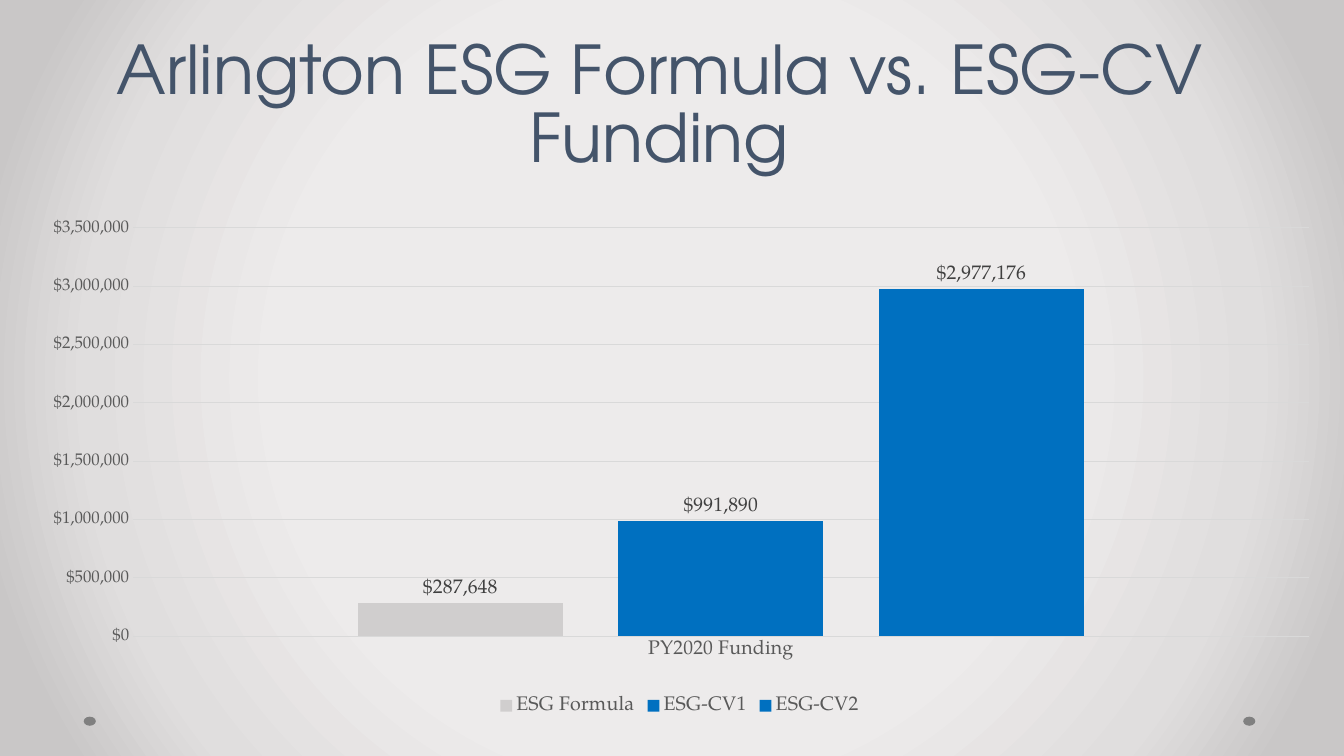
from dataclasses import dataclass

from lxml import etree
from pptx import Presentation
from pptx import util as u
from pptx.chart import data as chart_data
from pptx.dml.color import RGBColor
from pptx.enum import chart as charts, dml, shapes, text
from pptx.oxml import parse_xml
from pptx.oxml.ns import nsdecls, qn

WIDTH, HEIGHT = u.Inches(13.33), u.Inches(7.5)
HEADING_FONT, BODY_FONT = "TeX Gyre Adventor", "TeX Gyre Pagella"
DOLLARS = '"$"#,##0'

SLATE = RGBColor(0x44, 0x54, 0x6A)
DOT_GRAY = RGBColor(0x80, 0x80, 0x80)
LABEL_GRAY = RGBColor(0x40, 0x40, 0x40)
AXIS_GRAY = RGBColor(0x59, 0x59, 0x59)
GRID_GRAY = RGBColor(0xD9, 0xD9, 0xD9)
PALE_GRAY = RGBColor(0xD0, 0xCE, 0xCE)
BLUE = RGBColor(0x00, 0x70, 0xC0)
BACKDROP = (
    (50, RGBColor(0xED, 0xEB, 0xEB)),
    (76, RGBColor(0xE0, 0xDE, 0xDE)),
    (92, RGBColor(0xC9, 0xC7, 0xC7)),
)


@dataclass(frozen=True)
class Area:
    """A rectangle in percent of the slide, or of the chart."""
    left: float
    top: float
    width: float
    height: float

    def on_slide(self) -> tuple[int, int, int, int]:
        return (int(WIDTH * self.left / 100), int(HEIGHT * self.top / 100),
                int(WIDTH * self.width / 100), int(HEIGHT * self.height / 100))


@dataclass(frozen=True)
class Grant:
    name: str
    amount: int
    color: RGBColor


TITLE_AREA = Area(4.05, 4.8, 90.02, 19.07)
CHART_AREA = Area(2.4, 22.27, 96.32, 72.93)
PLOT_AREA = Area(7.8, 10.8, 90.8, 74.1)
DOTS = [Area(left, 94.8, 0.9, 1.2) for left in (92.5, 6.23)]
GRANTS = [
    Grant("ESG Formula", 287648, PALE_GRAY),
    Grant("ESG-CV1", 991890, BLUE),
    Grant("ESG-CV2", 2977176, BLUE),
]


def style_font(font, name: str, size: float, color: RGBColor) -> None:
    font.name, font.size, font.bold = name, u.Pt(size), False
    font.color.rgb = color


def style_line(line) -> None:
    line.color.rgb = GRID_GRAY
    line.width = u.Pt(0.75)


def paint_background(page) -> None:
    """Fill the page with a gradient that darkens outward from the centre."""
    page.background.fill.gradient()
    stops = "".join(
        f'<a:gs pos="{share * 1000}"><a:srgbClr val="{color}"/></a:gs>'
        for share, color in BACKDROP)
    radial = parse_xml(
        f'<a:gradFill {nsdecls("a")} rotWithShape="1"><a:gsLst>{stops}</a:gsLst>'
        '<a:path path="circle"><a:fillToRect l="50000" t="50000" r="50000" b="50000"/>'
        '</a:path></a:gradFill>')
    linear = next(page.element.iter(qn("a:gradFill")))
    linear.getparent().replace(linear, radial)


def add_dot(page, area: Area) -> None:
    dot = page.shapes.add_shape(shapes.MSO_SHAPE.OVAL, *area.on_slide())
    dot.shadow.inherit = False
    dot.fill.solid()
    dot.fill.fore_color.rgb = DOT_GRAY
    dot.line.fill.background()


def add_title(page, wording: str) -> None:
    frame = page.shapes.add_textbox(*TITLE_AREA.on_slide()).text_frame
    frame.word_wrap = True
    frame.vertical_anchor = text.MSO_ANCHOR.BOTTOM
    para = frame.paragraphs[0]
    para.text = wording
    para.alignment = text.PP_ALIGN.CENTER
    para.line_spacing = u.Pt(48)
    style_font(para.font, HEADING_FONT, 48, SLATE)


def place_plot(chart, area: Area) -> None:
    """Fix the inner plot rectangle inside the chart."""
    plot_area = next(chart.element.iter(qn("c:plotArea")))
    for automatic in plot_area.findall(qn("c:layout")):
        plot_area.remove(automatic)
    layout = etree.Element(qn("c:layout"))
    manual = etree.SubElement(layout, qn("c:manualLayout"))
    settings = {
        "layoutTarget": "inner", "xMode": "edge", "yMode": "edge",
        "x": area.left / 100, "y": area.top / 100,
        "w": area.width / 100, "h": area.height / 100,
    }
    for tag, value in settings.items():
        etree.SubElement(manual, qn(f"c:{tag}")).set("val", str(value))
    plot_area.insert(0, layout)


def style_axes(chart) -> None:
    for axis, size in ((chart.category_axis, 14), (chart.value_axis, 12)):
        axis.major_tick_mark = axis.minor_tick_mark = charts.XL_TICK_MARK.NONE
        style_font(axis.tick_labels.font, BODY_FONT, size, AXIS_GRAY)
    style_line(chart.category_axis.format.line)

    amounts = chart.value_axis
    amounts.minimum_scale, amounts.maximum_scale = 0, 3500000
    amounts.major_unit = 500000
    amounts.format.line.fill.background()
    amounts.tick_labels.number_format = DOLLARS
    amounts.tick_labels.number_format_is_linked = False
    style_line(amounts.major_gridlines.format.line)


def style_bar(series, color: RGBColor) -> None:
    series.format.fill.solid()
    series.format.fill.fore_color.rgb = color
    series.invert_if_negative = False
    labels = series.data_labels
    labels.show_value = True
    labels.position = charts.XL_LABEL_POSITION.OUTSIDE_END
    labels.number_format = DOLLARS
    labels.number_format_is_linked = False
    style_font(labels.font, BODY_FONT, 14, LABEL_GRAY)


def add_funding_chart(page) -> None:
    funding = chart_data.CategoryChartData(number_format=DOLLARS)
    funding.categories = ["PY2020 Funding"]
    for grant in GRANTS:
        funding.add_series(grant.name, [grant.amount])
    chart = page.shapes.add_chart(
        charts.XL_CHART_TYPE.COLUMN_CLUSTERED, *CHART_AREA.on_slide(), funding).chart
    chart.has_title = False
    chart.font.name, chart.font.size = BODY_FONT, u.Pt(10)
    chart.font.color.theme_color = dml.MSO_THEME_COLOR.TEXT_1

    chart.has_legend = True
    chart.legend.position = charts.XL_LEGEND_POSITION.BOTTOM
    chart.legend.include_in_layout = False
    style_font(chart.legend.font, BODY_FONT, 14, AXIS_GRAY)

    plot = chart.plots[0]
    plot.gap_width, plot.overlap = 219, -27
    plot.vary_by_categories = False
    for series, grant in zip(plot.series, GRANTS):
        style_bar(series, grant.color)
    style_axes(chart)
    place_plot(chart, PLOT_AREA)


def main() -> None:
    deck = Presentation()
    deck.slide_width, deck.slide_height = WIDTH, HEIGHT
    page = deck.slides.add_slide(deck.slide_layouts[6])
    paint_background(page)
    for area in DOTS:
        add_dot(page, area)
    add_title(page, "Arlington ESG Formula vs. ESG-CV Funding")
    add_funding_chart(page)
    deck.save("out.pptx")


if __name__ == "__main__":
    main()
